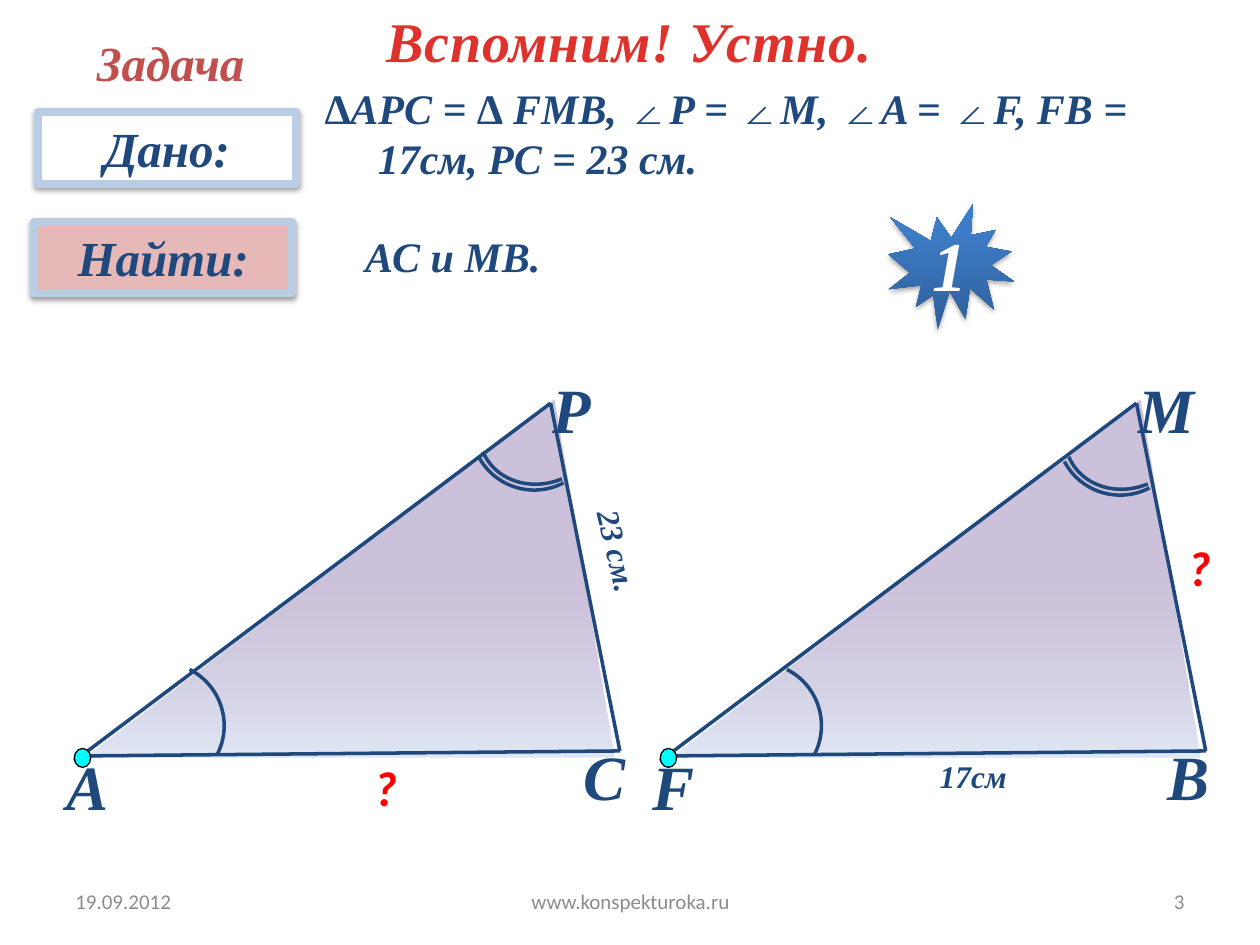
from lxml.etree import SubElement
from pptx import Presentation
from pptx.dml.color import RGBColor
from pptx.enum.shapes import MSO_CONNECTOR, MSO_SHAPE
from pptx.enum.text import MSO_ANCHOR, MSO_AUTO_SIZE, PP_ALIGN
from pptx.oxml.ns import qn
from pptx.util import Inches, Pt

NAVY = "1F497D"
RED = "FF0000"
SERIF = "Times New Roman"
color = RGBColor.from_string

presentation = Presentation()
presentation.slide_width, presentation.slide_height = Inches(10), Inches(7.5)
slide = presentation.slides.add_slide(presentation.slide_layouts[6])


def write(shape, text, size, hex_color=NAVY, font_name=SERIF, bold=True, wrap=False,
          align=PP_ALIGN.LEFT, anchor=MSO_ANCHOR.TOP, fit=MSO_AUTO_SIZE.SHAPE_TO_FIT_TEXT):
    frame = shape.text_frame
    frame_format = {"word_wrap": wrap, "vertical_anchor": anchor, "auto_size": fit}
    for name, value in frame_format.items():
        setattr(frame, name, value)
    paragraph = frame.paragraphs[0]
    paragraph.alignment = align
    run = paragraph.add_run()
    run.text = text
    font_format = {"name": font_name, "size": Pt(size), "bold": bold, "italic": bold}
    for name, value in font_format.items():
        setattr(run.font, name, value)
    run.font.color.rgb = color(hex_color)
    return shape


def add_shape(kind, box, fill=None, line=None, width=2, gradient=None, angle=0, shadow=None):
    shape = slide.shapes.add_shape(kind, *map(Inches, box))
    shape.shadow.inherit = False
    if gradient:
        shape.fill.gradient()
        shape.fill.gradient_angle = angle
        for stop, (position, hex_color) in zip(shape.fill.gradient_stops, gradient):
            stop.position = position
            stop.color.rgb = color(hex_color)
    elif fill:
        shape.fill.solid()
        shape.fill.fore_color.rgb = color(fill)
    else:
        shape.fill.background()
    if line:
        shape.line.color.rgb = color(line)
        shape.line.width = Pt(width)
    else:
        shape.line.fill.background()
    if shadow:
        alpha, distance = shadow
        effects = shape.element.xpath(".//a:effectLst")[0]
        outer = SubElement(effects, qn("a:outerShdw"), blurRad=str(Pt(3.1)),
                           dist=str(Pt(distance)), dir="5400000", rotWithShape="0")
        black = SubElement(outer, qn("a:srgbClr"), val="000000")
        SubElement(black, qn("a:alpha"), val=str(alpha * 1000))
    return shape


# Footer
for left, width, text, align in [
    (0.5, 2.33, "19.09.2012", PP_ALIGN.LEFT),
    (3.42, 3.17, "www.konspekturoka.ru", PP_ALIGN.CENTER),
    (7.17, 2.33, "3", PP_ALIGN.RIGHT),
]:
    box = slide.shapes.add_textbox(Inches(left), Inches(6.95), Inches(width), Inches(0.4))
    write(box, text, 12, "8C8C8C", "Calibri", bold=False, wrap=True, align=align,
          anchor=MSO_ANCHOR.MIDDLE, fit=MSO_AUTO_SIZE.NONE)

# Two equal triangles: left offset, base-angle arc left, top arcs shift, vertex labels
for offset, base_arc, arc_shift, labels in [
    (4.65, 5.52, 0.04, [("M", 4.29, 2.89, 0.65), ("B", 4.52, 5.8, 0.54), ("F", 0.43, 5.88, 0.54)]),
    (0, 0.78, 0, [("P", 4.29, 2.89, 0.51), ("С", 4.53, 5.8, 0.54), ("А", 0.43, 5.88, 0.54)]),
]:
    triangle = add_shape(MSO_SHAPE.ISOSCELES_TRIANGLE, (0.67 + offset, 3.17, 4.21, 2.84),
                         gradient=[(0.51, "B3A2C7"), (1, "E1E8F5")], angle=270)
    triangle.adjustments[0] = 0.886
    first_stop = triangle.element.xpath(".//a:gs/a:srgbClr")[0]
    SubElement(first_stop, qn("a:alpha"), val="65000")

    # Sides
    for x1, y1, x2, y2 in [(0.59, 6, 4.92, 5.96), (0.59, 6.04, 4.37, 3.2), (4.37, 3.2, 4.92, 5.96)]:
        side = slide.shapes.add_connector(
            MSO_CONNECTOR.STRAIGHT, Inches(x1 + offset), Inches(y1), Inches(x2 + offset), Inches(y2))
        side.line.color.rgb = color(NAVY)
        side.line.width = Pt(2)
        SubElement(side.element.spPr, qn("a:effectLst"))
    add_shape(MSO_SHAPE.OVAL, (0.59 + offset, 5.94, 0.13, 0.15), "00FFFF", "000000", 0.75)

    # Vertex labels
    for letter, left, top, width in labels:
        box = slide.shapes.add_textbox(Inches(left + offset), Inches(top), Inches(width), Inches(0.71))
        write(box, letter, 36)

    # Angle marks: single at the base, double at the top
    for arc_box, rotation, flipped in [
        ((base_arc, 5.26, 1, 1), 26.8, False),
        ((3.74 + offset, 2.89 + arc_shift, 1, 1), 242.2, True),
        ((3.85 + offset, 2.9 + arc_shift, 0.88, 0.99), 247.3, True),
    ]:
        arc = add_shape(MSO_SHAPE.ARC, arc_box, line=NAVY)
        arc.rotation = rotation
        if flipped:
            arc.element.spPr.xfrm.set("flipH", "1")

# Title
title = slide.shapes.add_textbox(Inches(2.95), Inches(0), Inches(4.09), Inches(0.64))
write(title, "Вспомним! Устно.", 32, "E0322D", wrap=True, align=PP_ALIGN.CENTER)
title.element.xpath(".//a:rPr")[0].set("spc", "50")

# Given and find plates
for left, top, fill, text in [(0.3, 0.89, "FFFFFF", "Дано:"), (0.27, 1.76, "E6B9B8", "Найти:")]:
    plate = add_shape(MSO_SHAPE.RECTANGLE, (left, top, 2.05, 0.57), fill, "B9CDE5", 4.5,
                      shadow=(38, 1.6))
    write(plate, text, 28, wrap=True, align=PP_ALIGN.CENTER)

# Given conditions with a hanging indent
given = slide.shapes.add_textbox(Inches(2.4), Inches(0.6), Inches(7.6), Inches(0.91))
write(given, "∆АPC = ∆ FMB, ∠P = ∠M, ∠A = ∠F, FB = 17см, PC = 23 см.", 24,
      wrap=True, anchor=MSO_ANCHOR.MIDDLE)
given.text_frame.margin_right = Inches(0.4)
properties = given.element.xpath(".//a:pPr")[0]
properties.set("marL", str(Inches(0.5)))
properties.set("indent", str(Inches(-0.42)))

# Number star
star = add_shape(MSO_SHAPE.EXPLOSION1, (7.05, 1.62, 1, 1),
                 gradient=[(0, "2F5F99"), (0.8, "3D7CC7")], angle=90, shadow=(35, 1.8))
write(star, "1", 40, "FFFFFF", wrap=True, align=PP_ALIGN.CENTER,
      anchor=MSO_ANCHOR.MIDDLE, fit=MSO_AUTO_SIZE.NONE)

# Heading, question and side lengths
for text, left, top, width, height, size, hex_color, font_name, rotation in [
    ("Задача", 0.67, 0.21, 1.39, 0.57, 28, "C0504D", SERIF, 0),
    ("АС и МВ.", 2.8, 1.78, 1.61, 0.5, 24, NAVY, SERIF, 0),
    ("23 см.", 4.45, 4.21, 0.93, 0.4, 18, NAVY, SERIF, 76.8),
    ("17см", 7.36, 5.96, 0.74, 0.4, 18, NAVY, SERIF, 0),
    ("?", 2.87, 5.96, 0.38, 0.57, 28, RED, "Calibri", 0),
    ("?", 9.33, 4.22, 0.38, 0.57, 28, RED, "Calibri", 0),
]:
    box = slide.shapes.add_textbox(Inches(left), Inches(top), Inches(width), Inches(height))
    box.rotation = rotation
    write(box, text, size, hex_color, font_name)

presentation.save("out.pptx")
